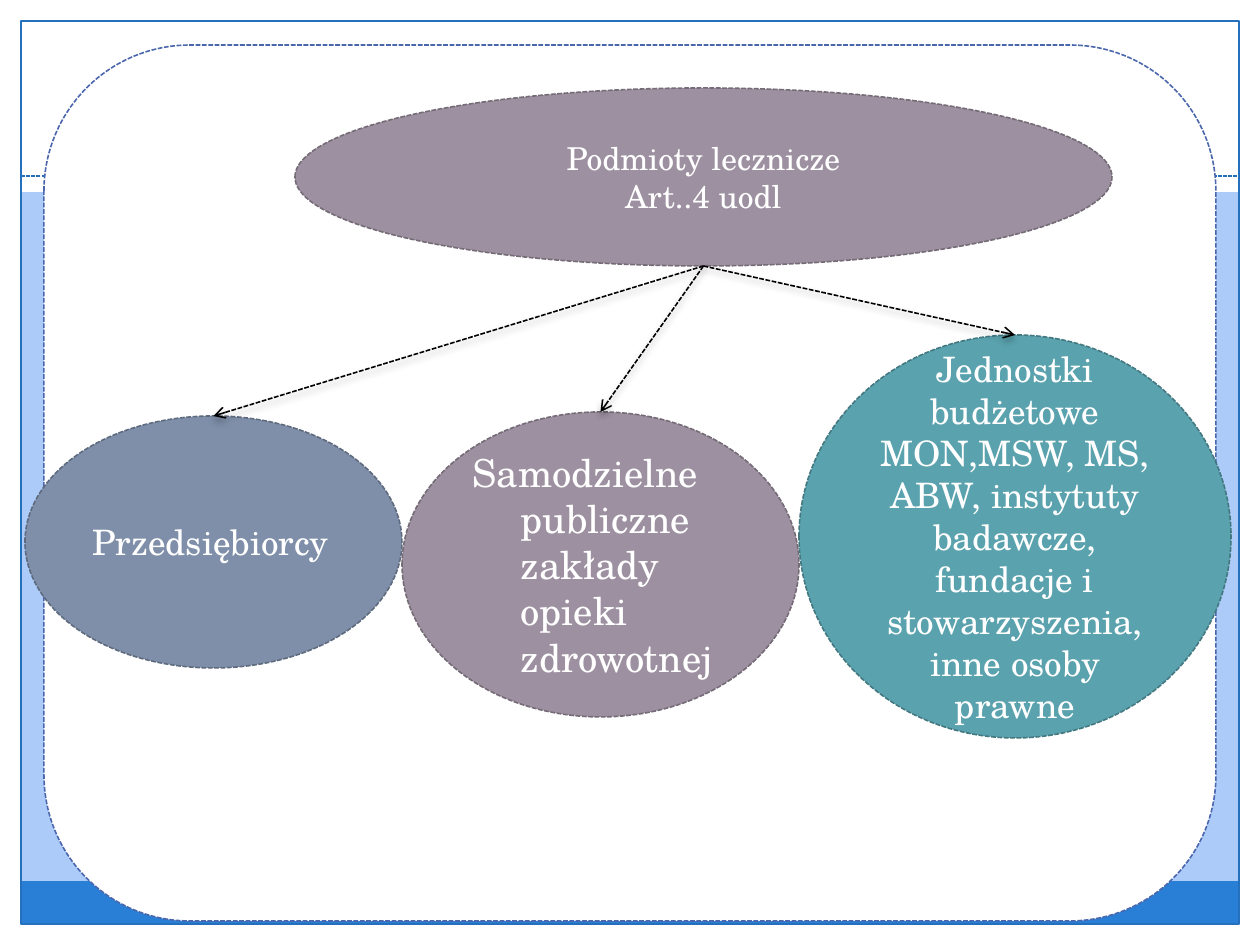
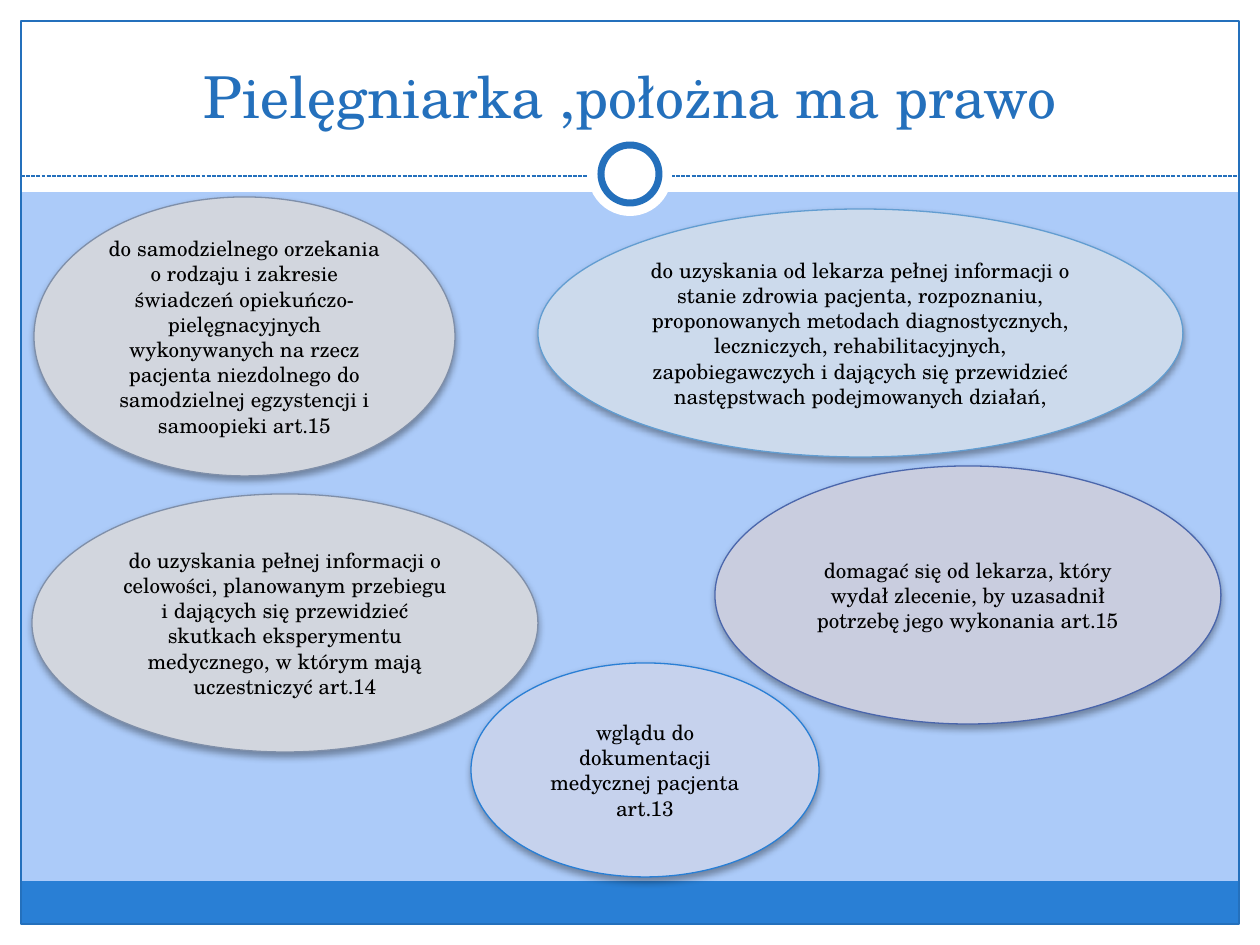
import collections

import lxml.etree
import pptx
import pptx.dml.color
import pptx.enum.dml
import pptx.enum.shapes
import pptx.enum.text
import pptx.oxml.ns
import pptx.util

RGB = pptx.dml.color.RGBColor
SHAPE = pptx.enum.shapes.MSO_SHAPE
ANCHOR = pptx.enum.text.MSO_ANCHOR
ALIGN = pptx.enum.text.PP_ALIGN
qn = pptx.oxml.ns.qn
Box = collections.namedtuple("Box", "left top width height")

WHITE = RGB(0xFF, 0xFF, 0xFF)
BLACK = RGB(0x00, 0x00, 0x00)
SKY = RGB(0xAC, 0xCB, 0xF9)
BLUE = RGB(0x29, 0x7F, 0xD5)
DEEP_BLUE = RGB(0x24, 0x70, 0xBC)
INDIGO = RGB(0x4A, 0x66, 0xAC)
MAUVE = RGB(0x9D, 0x90, 0xA0)
MAUVE_EDGE = RGB(0x74, 0x6B, 0x76)
SLATE = RGB(0x7F, 0x8F, 0xA9)
SLATE_EDGE = RGB(0x5E, 0x6A, 0x7D)
TEAL = RGB(0x5A, 0xA2, 0xAE)
TEAL_EDGE = RGB(0x43, 0x78, 0x81)
LIGHT_BLUE = RGB(0x62, 0x9D, 0xD1)
PALE_BLUE = RGB(0xC6, 0xD2, 0xED)
PALE_SKY = RGB(0xCC, 0xDA, 0xEC)
PALE_SLATE = RGB(0xD2, 0xD6, 0xDE)
PALE_INDIGO = RGB(0xC9, 0xCD, 0xDF)

FONT = "TeX Gyre Schola"
PAGE = Box(0, 0, 1260, 945)
MARGIN = 21
HEADER = 192
FOOTER = 43


def px(length):
    return pptx.util.Emu(round(length * 914400 / 126))


def within(box, left, top, width, height):
    return Box(box.left + left, box.top + top, width, height)


def style_line(line, color, weight, dashed=False):
    line.color.rgb = color
    line.width = pptx.util.Pt(weight)
    if dashed:
        line.dash_style = pptx.enum.dml.MSO_LINE.SQUARE_DOT


def add_shadow(effects):
    shadow = lxml.etree.SubElement(
        effects, qn("a:outerShdw"), blurRad="50800", dist="25400",
        dir="5400000", rotWithShape="0")
    color = lxml.etree.SubElement(shadow, qn("a:srgbClr"), val=str(BLACK))
    lxml.etree.SubElement(color, qn("a:alpha"), val="35000")


def add_figure(slide, kind, box, fill=None, edge=None, weight=0.75, dashed=False):
    figure = slide.shapes.add_shape(kind, *map(px, box))
    figure.shadow.inherit = False
    if fill is None:
        figure.fill.background()
    else:
        figure.fill.solid()
        figure.fill.fore_color.rgb = fill
    if edge is None:
        figure.line.fill.background()
    else:
        style_line(figure.line, edge, weight, dashed)
    return figure


def add_line(slide, start, end, color, weight):
    line = slide.shapes.add_connector(
        pptx.enum.shapes.MSO_CONNECTOR.STRAIGHT, *map(px, start + end))
    style_line(line.line, color, weight, dashed=True)
    effects = lxml.etree.SubElement(line._element.spPr, qn("a:effectLst"))
    return line, effects


def write(figure, text, size, color, align=ALIGN.CENTER, anchor=ANCHOR.MIDDLE):
    frame = figure.text_frame
    frame.word_wrap = True
    frame.vertical_anchor = anchor
    frame.text = text
    for paragraph in frame.paragraphs:
        paragraph.alignment = align
        paragraph.font.name = FONT
        paragraph.font.size = pptx.util.Pt(size)
        paragraph.font.color.rgb = color


def hang(figure, indent):
    for paragraph in figure.text_frame.paragraphs:
        properties = paragraph._p.get_or_add_pPr()
        properties.set("marL", str(px(indent)))
        properties.set("indent", str(px(-indent)))


def add_page(presentation, box):
    slide = presentation.slides.add_slide(presentation.slide_layouts[6])
    slide.background.fill.solid()
    slide.background.fill.fore_color.rgb = SKY
    right = box.width - MARGIN
    bottom = box.height - MARGIN
    inner = right - MARGIN
    for band in ((0, bottom, box.width, MARGIN), (0, 0, box.width, HEADER),
                 (0, 0, MARGIN, box.height), (right, 0, MARGIN, box.height)):
        add_figure(slide, SHAPE.RECTANGLE, within(box, *band), WHITE)
    add_figure(slide, SHAPE.RECTANGLE,
               within(box, MARGIN, bottom - FOOTER, inner, FOOTER), BLUE)
    add_figure(slide, SHAPE.RECTANGLE,
               within(box, MARGIN, MARGIN, inner, bottom - MARGIN), edge=DEEP_BLUE)
    rule = box.top + HEADER - 16
    add_line(slide, (box.left + MARGIN, rule), (box.left + right, rule),
             DEEP_BLUE, 0.75)
    return slide


def add_heading(slide, box, text):
    title = slide.shapes.add_textbox(*map(px, within(box, 42, 31, 1176, 105)))
    write(title, text, 33, DEEP_BLUE, anchor=ANCHOR.BOTTOM)


def add_ring(slide, box):
    add_figure(slide, SHAPE.OVAL, box, WHITE)
    gap = 13
    add_figure(slide, SHAPE.OVAL,
               within(box, gap, gap, box.width - 2 * gap, box.height - 2 * gap),
               WHITE, DEEP_BLUE, 4)


def add_entity_tree(slide, box):
    add_figure(slide, SHAPE.ROUNDED_RECTANGLE, box, WHITE, INDIGO, 0.9, True)

    def add_entity(place, fill, edge, text, size, align=ALIGN.CENTER):
        entity = add_figure(slide, SHAPE.OVAL, within(box, *place),
                            fill, edge, 0.9, True)
        write(entity, text, size, WHITE, align)
        return entity

    root_place = (251, 43, 817, 178)
    add_entity(root_place, MAUVE, MAUVE_EDGE, "Podmioty lecznicze\nArt..4 uodl", 18)
    entrepreneurs = add_entity((-19, 371, 377, 252), SLATE, SLATE_EDGE,
                               "Przedsiębiorcy", 20, ALIGN.LEFT)
    public_units = add_entity((358, 367, 397, 305), MAUVE, MAUVE_EDGE,
                              "Samodzielne publiczne zakłady opieki zdrowotnej",
                              22, ALIGN.LEFT)
    budget_units = add_entity(
        (755, 290, 432, 403), TEAL, TEAL_EDGE,
        "Jednostki budżetowe MON,MSW, MS, ABW, instytuty badawcze, "
        "fundacje i stowarzyszenia, inne osoby prawne", 20)
    for entity in (entrepreneurs, public_units):
        hang(entity, 48)

    root = within(box, *root_place)
    start = (root.left + root.width / 2, root.top + root.height)
    for entity in (entrepreneurs, public_units, budget_units):
        arrow, effects = add_line(slide, start, start, BLACK, 0.9)
        arrow.end_connect(entity, 0)
        lxml.etree.SubElement(arrow.line._get_or_add_ln(), qn("a:tailEnd"),
                              type="arrow")
        add_shadow(effects)


def add_rights(slide, box):
    rights = (
        ((450, 471, 348, 214), PALE_BLUE, BLUE,
         "wglądu do dokumentacji medycznej pacjenta art.13"),
        ((517, 17, 645, 248), PALE_SKY, LIGHT_BLUE,
         "do uzyskania od lekarza pełnej informacji o stanie zdrowia pacjenta, "
         "rozpoznaniu, proponowanych metodach diagnostycznych, leczniczych, "
         "rehabilitacyjnych, zapobiegawczych i dających się przewidzieć "
         "następstwach podejmowanych działań,"),
        ((11, 302, 506, 258), PALE_SLATE, SLATE,
         "do uzyskania pełnej informacji o celowości, planowanym przebiegu "
         "i dających się przewidzieć skutkach eksperymentu medycznego, "
         "w którym mają uczestniczyć art.14"),
        ((694, 274, 506, 258), PALE_INDIGO, INDIGO,
         "domagać się od lekarza, który wydał zlecenie, by uzasadnił "
         "potrzebę jego wykonania art.15"),
        ((13, 5, 421, 279), PALE_SLATE, SLATE,
         "do samodzielnego orzekania o rodzaju i zakresie świadczeń "
         "opiekuńczo-pielęgnacyjnych wykonywanych na rzecz pacjenta niezdolnego "
         "do samodzielnej egzystencji i samoopieki art.15"),
    )
    for place, fill, edge, text in rights:
        right = add_figure(slide, SHAPE.OVAL, within(box, *place), fill, edge)
        add_shadow(right._element.spPr.find(qn("a:effectLst")))
        write(right, text, 12, BLACK)


def main():
    presentation = pptx.Presentation()
    presentation.slide_width = px(PAGE.width)
    presentation.slide_height = px(PAGE.height)

    entities = add_page(presentation, PAGE)
    add_entity_tree(entities, Box(44, 45, 1172, 876))

    nurse_rights = add_page(presentation, PAGE)
    add_ring(nurse_rights, Box(588, 132, 84, 84))
    add_heading(nurse_rights, PAGE, "Pielęgniarka ,położna ma prawo")
    add_rights(nurse_rights, Box(MARGIN, HEADER, 1218, 689))

    presentation.save("out.pptx")


if __name__ == "__main__":
    main()
